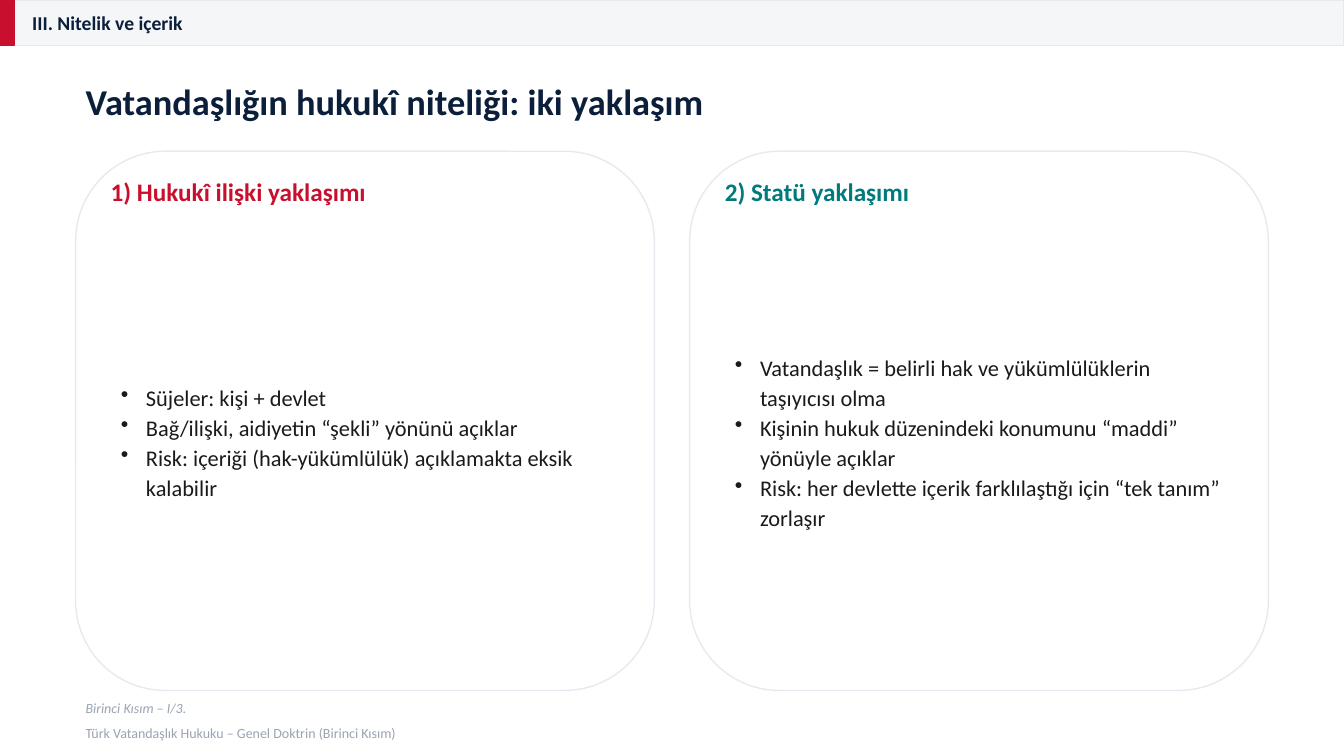
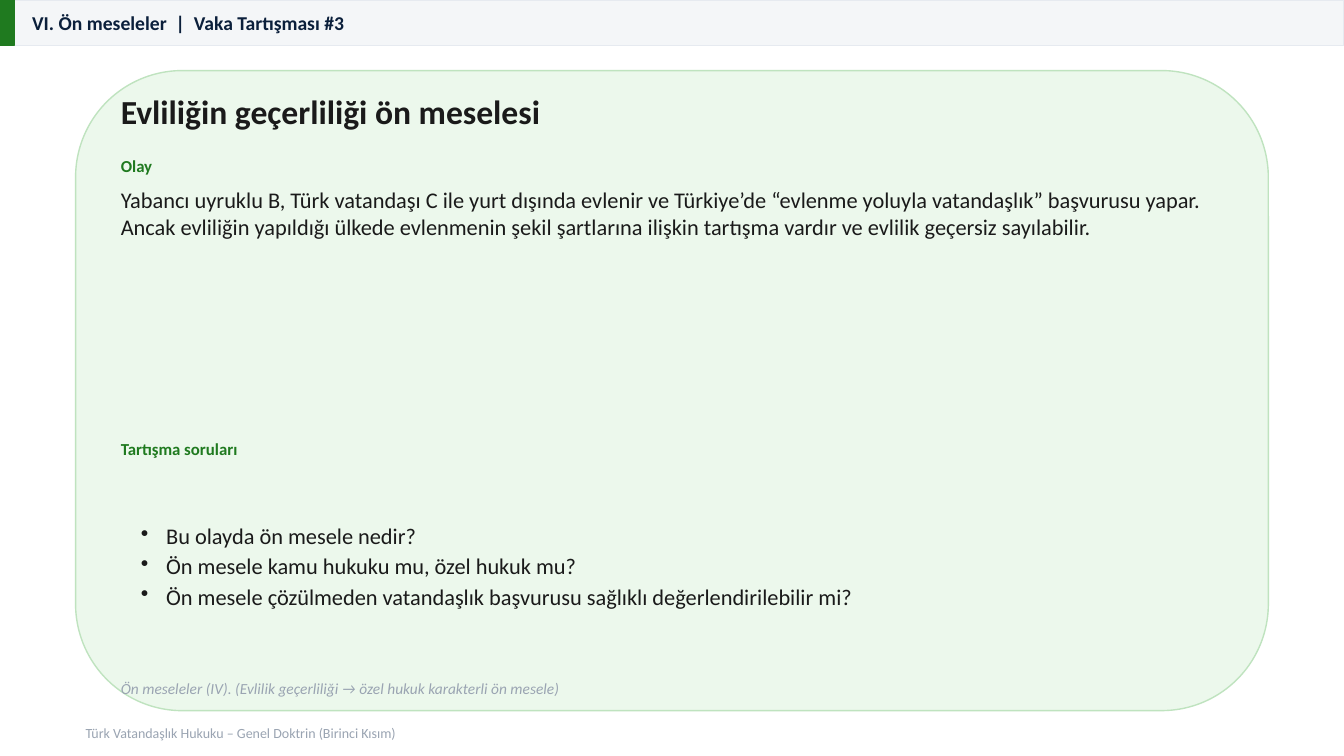
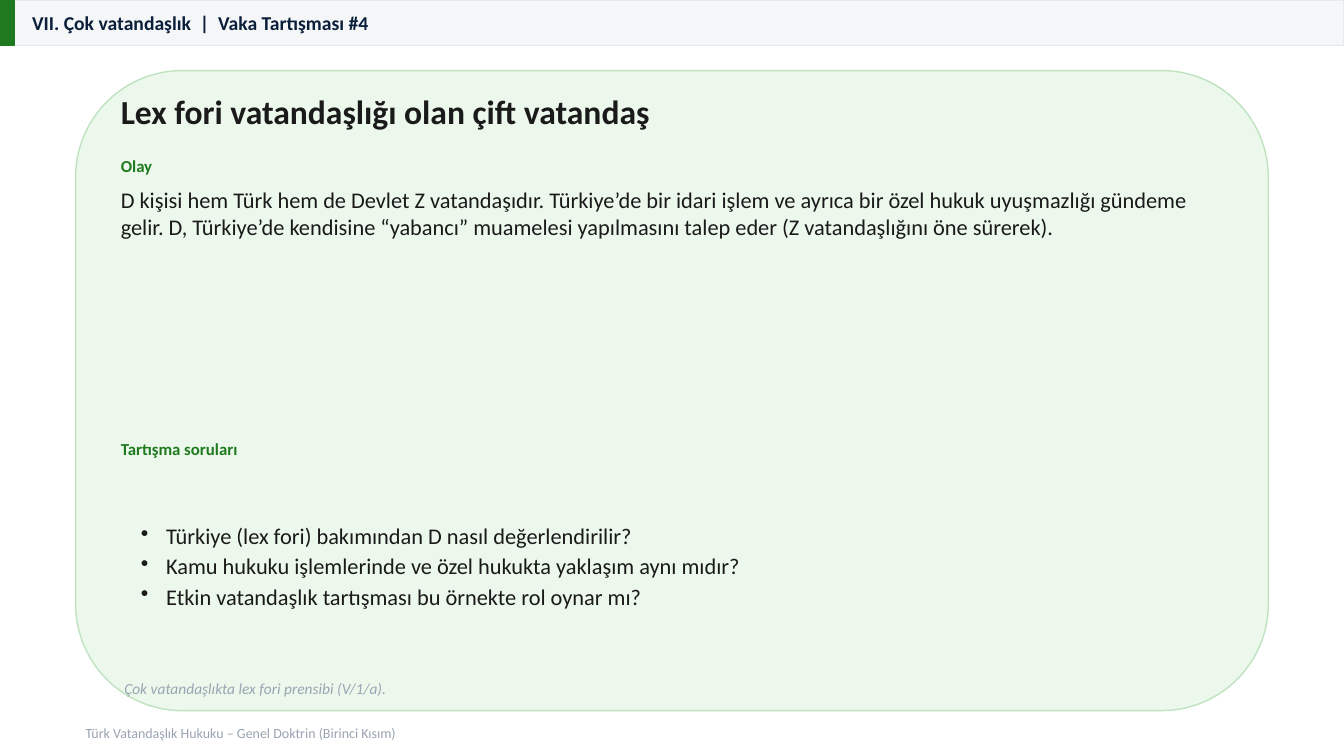
"""Build three slides on Turkish citizenship law: one comparison and two case discussions."""
from dataclasses import dataclass

from lxml import etree
from pptx import Presentation
from pptx.dml.color import RGBColor
from pptx.enum.shapes import MSO_SHAPE
from pptx.enum.text import MSO_ANCHOR
from pptx.oxml.ns import qn
from pptx.util import Inches, Pt

RECT = MSO_SHAPE.RECTANGLE
ROUNDED = MSO_SHAPE.ROUNDED_RECTANGLE
TOP, MIDDLE = MSO_ANCHOR.TOP, MSO_ANCHOR.MIDDLE

FONT = "Calibri"
NAVY, INK, MUTED = "0B1F3B", "1A1A1A", "9AA4B2"
RED, TEAL, GREEN = "C8102E", "007A7A", "1F7A1F"
WHITE, BAND, BORDER = "FFFFFF", "F4F6F8", "E6EAF0"
MINT, MINT_BORDER = "ECF8EC", "BFE3BF"

SLIDE_W, SLIDE_H = 13.33, 7.5
BAND_H = 0.45
MARGIN = 0.75
CONTENT_W = SLIDE_W - 2 * MARGIN
GAP = 0.35
CARD_W = (CONTENT_W - GAP) / 2
CASE_X = MARGIN + 0.35
CASE_W = CONTENT_W - 0.7
FOOTER = "Türk Vatandaşlık Hukuku – Genel Doktrin (Birinci Kısım)"


@dataclass
class Card:
    heading: str
    color: str
    points: list[str]


@dataclass
class Comparison:
    section: str
    title: str
    cards: list[Card]
    source: str


@dataclass
class Case:
    section: str
    title: str
    facts: str
    questions: list[str]
    source: str


COMPARISON = Comparison(
    "III. Nitelik ve içerik",
    "Vatandaşlığın hukukî niteliği: iki yaklaşım",
    [
        Card("1) Hukukî ilişki yaklaşımı", RED, [
            "Süjeler: kişi + devlet",
            "Bağ/ilişki, aidiyetin “şekli” yönünü açıklar",
            "Risk: içeriği (hak-yükümlülük) açıklamakta eksik kalabilir",
        ]),
        Card("2) Statü yaklaşımı", TEAL, [
            "Vatandaşlık = belirli hak ve yükümlülüklerin taşıyıcısı olma",
            "Kişinin hukuk düzenindeki konumunu “maddi” yönüyle açıklar",
            "Risk: her devlette içerik farklılaştığı için “tek tanım” zorlaşır",
        ]),
    ],
    "Birinci Kısım – I/3.",
)

CASES = [
    Case(
        "VI. Ön meseleler  |  Vaka Tartışması #3",
        "Evliliğin geçerliliği ön meselesi",
        "Yabancı uyruklu B, Türk vatandaşı C ile yurt dışında evlenir ve Türkiye’de "
        "“evlenme yoluyla vatandaşlık” başvurusu yapar. Ancak evliliğin yapıldığı ülkede "
        "evlenmenin şekil şartlarına ilişkin tartışma vardır ve evlilik geçersiz sayılabilir.",
        [
            "Bu olayda ön mesele nedir?",
            "Ön mesele kamu hukuku mu, özel hukuk mu?",
            "Ön mesele çözülmeden vatandaşlık başvurusu sağlıklı değerlendirilebilir mi?",
        ],
        "Ön meseleler (IV). (Evlilik geçerliliği → özel hukuk karakterli ön mesele)",
    ),
    Case(
        "VII. Çok vatandaşlık  |  Vaka Tartışması #4",
        "Lex fori vatandaşlığı olan çift vatandaş",
        "D kişisi hem Türk hem de Devlet Z vatandaşıdır. Türkiye’de bir idari işlem ve ayrıca "
        "bir özel hukuk uyuşmazlığı gündeme gelir. D, Türkiye’de kendisine “yabancı” muamelesi "
        "yapılmasını talep eder (Z vatandaşlığını öne sürerek).",
        [
            "Türkiye (lex fori) bakımından D nasıl değerlendirilir?",
            "Kamu hukuku işlemlerinde ve özel hukukta yaklaşım aynı mıdır?",
            "Etkin vatandaşlık tartışması bu örnekte rol oynar mı?",
        ],
        " Çok vatandaşlıkta lex fori prensibi (V/1/a).",
    ),
]


def rgb(color: str) -> RGBColor:
    return RGBColor.from_string(color)


def add_box(s, kind, x: float, y: float, w: float, h: float, fill: str, line: str) -> None:
    sp = s.shapes.add_shape(kind, Inches(x), Inches(y), Inches(w), Inches(h))
    sp.shadow.inherit = False
    sp.fill.solid()
    sp.fill.fore_color.rgb = rgb(fill)
    sp.line.color.rgb = rgb(line)
    sp.line.width = Pt(1)


def add_bullet(p) -> None:
    pPr = p._p.get_or_add_pPr()
    pPr.set("marL", str(Inches(0.25)))
    pPr.set("indent", str(-Inches(0.25)))
    etree.SubElement(pPr, qn("a:buChar")).set("char", "•")
    p.line_spacing = 1.12


def add_text(s, text: str | list[str], x: float, y: float, w: float, h: float, *,
             size: float = 16, color: str = INK, bold: bool = False, italic: bool = False,
             anchor=MIDDLE) -> None:
    tf = s.shapes.add_textbox(Inches(x), Inches(y), Inches(w), Inches(h)).text_frame
    tf.word_wrap = True
    tf.vertical_anchor = anchor
    bulleted = isinstance(text, list)
    for i, line in enumerate(text if bulleted else [text]):
        p = tf.add_paragraph() if i else tf.paragraphs[0]
        if bulleted:
            add_bullet(p)
        r = p.add_run()
        r.text = line
        r.font.name = FONT
        r.font.size = Pt(size)
        r.font.bold = bold
        r.font.italic = italic
        r.font.color.rgb = rgb(color)


def add_frame(prs, section: str, accent: str):
    s = prs.slides.add_slide(prs.slide_layouts[6])
    add_box(s, RECT, 0, 0, SLIDE_W, BAND_H, BAND, BORDER)
    add_box(s, RECT, 0, 0, 0.14, BAND_H, accent, accent)
    add_text(s, section, 0.22, 0.08, 12.89, 0.3, size=14, color=NAVY, bold=True)
    add_text(s, FOOTER, MARGIN, 7.15, CONTENT_W, 0.25, size=10, color=MUTED)
    return s


def add_comparison(prs, comparison: Comparison) -> None:
    s = add_frame(prs, comparison.section, RED)
    add_text(s, comparison.title, MARGIN, 0.7, CONTENT_W, 0.6, size=26, color=NAVY, bold=True)
    for i, card in enumerate(comparison.cards):
        x = MARGIN + i * (CARD_W + GAP)
        add_box(s, ROUNDED, x, 1.5, CARD_W, 5.35, WHITE, BORDER)
        add_text(s, card.heading, x + 0.25, 1.7, CARD_W - 0.5, 0.4,
                 size=18, color=card.color, bold=True)
        add_text(s, card.points, x + 0.35, 2.2, CARD_W - 0.7, 4.35)
    add_text(s, comparison.source, MARGIN, 6.9, CONTENT_W, 0.25,
             size=10, color=MUTED, italic=True)


def add_case(prs, case: Case) -> None:
    s = add_frame(prs, case.section, GREEN)
    add_box(s, ROUNDED, MARGIN, 0.7, CONTENT_W, 6.35, MINT, MINT_BORDER)
    add_text(s, case.title, CASE_X, 0.85, CASE_W, 0.5, size=24, bold=True)
    for label, y, w in (("Olay", 1.5, 1), ("Tartışma soruları", 4.3, 2.5)):
        add_text(s, label, CASE_X, y, w, 0.3, size=12, color=GREEN, bold=True)
    add_text(s, case.facts, CASE_X, 1.8, CASE_W, 2.35, anchor=TOP)
    add_text(s, case.questions, CASE_X + 0.2, 4.6, CASE_W - 0.3, 2)
    add_text(s, case.source, CASE_X, 6.68, CASE_W, 0.3, size=11, color=MUTED, italic=True)


def main() -> None:
    prs = Presentation()
    prs.slide_width, prs.slide_height = Inches(SLIDE_W), Inches(SLIDE_H)
    add_comparison(prs, COMPARISON)
    for case in CASES:
        add_case(prs, case)
    prs.save("out.pptx")


if __name__ == "__main__":
    main()
